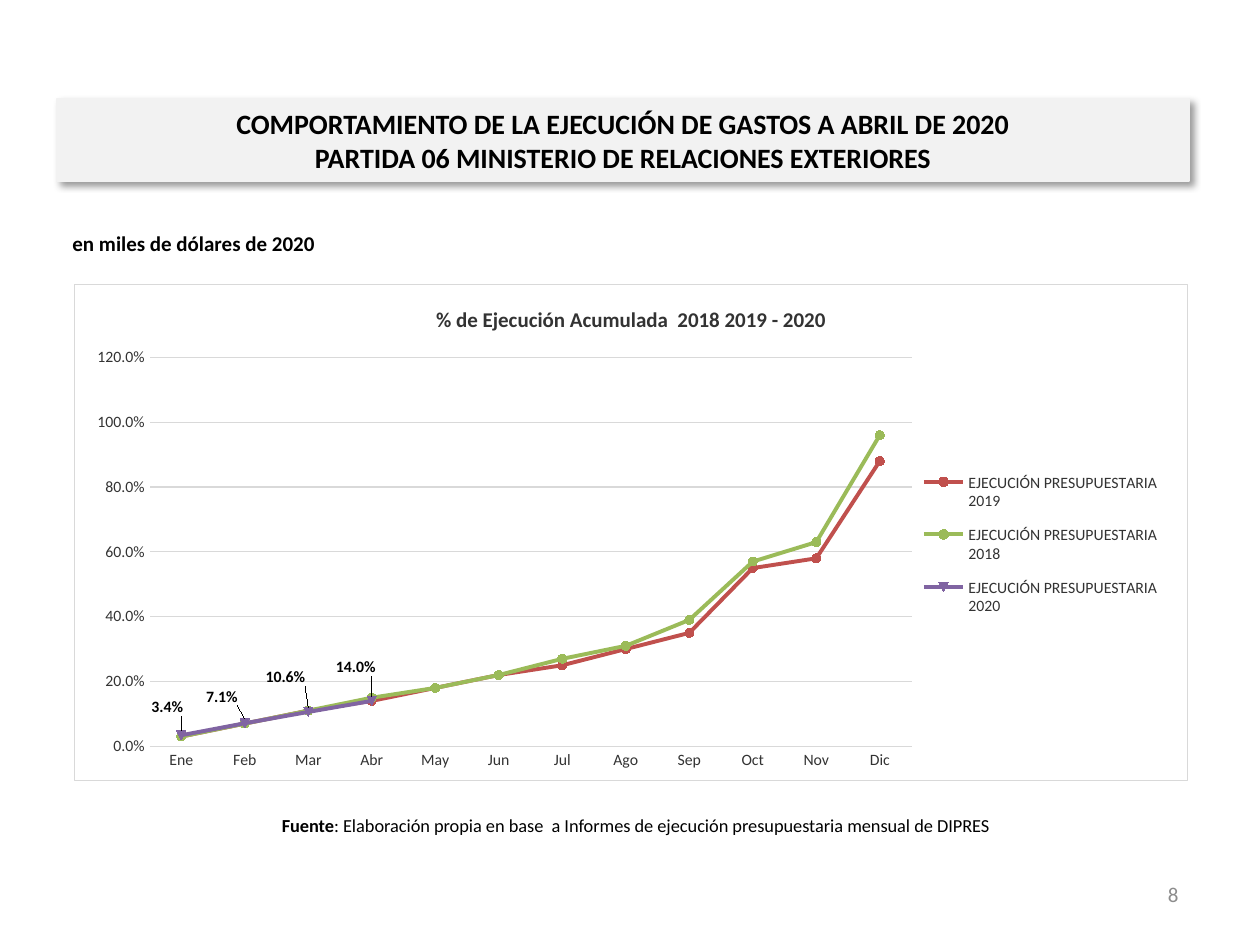
import pptx
import pptx.chart.data
import pptx.dml.color
import pptx.enum.chart
import pptx.enum.shapes
import pptx.enum.text
import pptx.oxml
import pptx.oxml.ns
import pptx.util

PX_PER_INCH = 126
FONT = "Calibri"
BLACK, DARK, GRID, PANEL = "000000", "333333", "D9D9D9", "F2F2F2"
ALIGN = pptx.enum.text.PP_ALIGN
ANCHOR = pptx.enum.text.MSO_ANCHOR
NAMESPACES = pptx.oxml.ns.nsdecls("a", "c")

MONTHS = ["Ene", "Feb", "Mar", "Abr", "May", "Jun",
          "Jul", "Ago", "Sep", "Oct", "Nov", "Dic"]
CIRCLE = pptx.enum.chart.XL_MARKER_STYLE.CIRCLE
# Year, colour, marker, accumulated share of the budget by month
EXECUTION = [
    (2019, "C0504D", CIRCLE,
     [.03, .07, .11, .14, .18, .22, .25, .30, .35, .55, .58, .88]),
    (2018, "9BBB59", CIRCLE,
     [.03, .07, .11, .15, .18, .22, .27, .31, .39, .57, .63, .96]),
    (2020, "8064A2", None, [.034, .071, .106, .14] + [None] * 8),
]
# Shift in px of each 2020 label from its place above the point
LABEL_SHIFTS = [(-14, -10), (-23, -8), (-23, -16), (-16, -15)]


def px(length):
    return pptx.util.Emu(round(length * 914400 / PX_PER_INCH))


def rgb(color):
    return pptx.dml.color.RGBColor.from_string(color)


def xml(markup):
    """Parse an element whose root has a free place for namespaces, marked NS."""
    return pptx.oxml.parse_xml(markup.replace("NS", NAMESPACES, 1))


def style_font(font, size, color=BLACK, bold=False):
    font.name, font.size, font.bold = FONT, pptx.util.Pt(size), bold
    font.color.rgb = rgb(color)


def write(frame, text, size, color=BLACK, bold=False, align=ALIGN.LEFT,
          anchor=ANCHOR.TOP, wrap=True):
    """Add text to the first paragraph; each newline is a line break."""
    frame.word_wrap, frame.vertical_anchor = wrap, anchor
    paragraph = frame.paragraphs[0]
    paragraph.alignment = align
    for number, line in enumerate(text.split("\n")):
        if number:
            paragraph.add_line_break()
        run = paragraph.add_run()
        run.text = line
        style_font(run.font, size, color, bold)


def text_frame(slide, box):
    return slide.shapes.add_textbox(*map(px, box)).text_frame


def add_heading(slide, box):
    banner = slide.shapes.add_shape(
        pptx.enum.shapes.MSO_SHAPE.RECTANGLE, *map(px, box))
    banner.fill.solid()
    banner.fill.fore_color.rgb = rgb(PANEL)
    banner.line.color.rgb = rgb(PANEL)
    banner.line.width = pptx.util.Pt(0.75)
    banner.shadow.inherit = False
    effects = banner.element.spPr.find(pptx.oxml.ns.qn("a:effectLst"))
    effects.append(xml(
        '<a:outerShdw NS blurRad="50800" dist="38100" dir="2700000" algn="tl">'
        '<a:srgbClr val="000000"><a:alpha val="40000"/></a:srgbClr>'
        '</a:outerShdw>'))
    write(banner.text_frame,
          "COMPORTAMIENTO DE LA EJECUCIÓN DE GASTOS A ABRIL DE 2020\n"
          "PARTIDA 06 MINISTERIO DE RELACIONES EXTERIORES",
          16, bold=True, align=ALIGN.CENTER, anchor=ANCHOR.MIDDLE)


def manual_layout(left, top, width, height, chart_box, inner=False):
    """Layout for a chart part, placed in px relative to the chart."""
    _, _, chart_width, chart_height = chart_box
    target = '<c:layoutTarget val="inner"/>' if inner else ""
    return xml(
        f'<c:layout NS><c:manualLayout>{target}'
        '<c:xMode val="edge"/><c:yMode val="edge"/>'
        f'<c:x val="{left / chart_width:.4f}"/>'
        f'<c:y val="{top / chart_height:.4f}"/>'
        f'<c:w val="{width / chart_width:.4f}"/>'
        f'<c:h val="{height / chart_height:.4f}"/>'
        '</c:manualLayout></c:layout>')


def set_layout(part, layout, before):
    for old in part.findall(pptx.oxml.ns.qn("c:layout")):
        part.remove(old)
    part.find(pptx.oxml.ns.qn(before)).addprevious(layout)


def style_series(series, color, marker):
    series.smooth = False
    series.format.line.color.rgb = rgb(color)
    series.format.line.width = pptx.util.Pt(2.25)
    if marker is not None:
        series.marker.style = marker
        series.marker.size = 5
    series.marker.format.fill.solid()
    series.marker.format.fill.fore_color.rgb = rgb(color)
    series.marker.format.line.color.rgb = rgb(color)


def label_points(series, chart_box):
    _, _, width, height = chart_box
    for index, (right, down) in enumerate(LABEL_SHIFTS):
        label = series.points[index].data_label
        style_font(label.font, 9, bold=True)
        label.position = pptx.enum.chart.XL_LABEL_POSITION.ABOVE
    entries = series.data_labels._element.findall(pptx.oxml.ns.qn("c:dLbl"))
    for entry, (right, down) in zip(entries, LABEL_SHIFTS):
        index = entry.find(pptx.oxml.ns.qn("c:idx"))
        index.addnext(xml('<c:numFmt NS formatCode="0.0%" sourceLinked="0"/>'))
        index.addnext(xml(
            '<c:layout NS><c:manualLayout>'
            f'<c:x val="{right / width:.4f}"/><c:y val="{down / height:.4f}"/>'
            '</c:manualLayout></c:layout>'))
    labels = series.data_labels
    labels.show_value = True
    labels.number_format, labels.number_format_is_linked = "0.0%", False
    style_font(labels.font, 9, bold=True)


def style_axes(chart):
    no_tick = pptx.enum.chart.XL_TICK_MARK.NONE
    for axis in (chart.category_axis, chart.value_axis):
        axis.major_tick_mark = axis.minor_tick_mark = no_tick
        style_font(axis.tick_labels.font, 9, DARK)
    values = chart.value_axis
    values.minimum_scale, values.maximum_scale, values.major_unit = 0, 1.2, .2
    values.tick_labels.number_format = "0.0%"
    values.tick_labels.number_format_is_linked = False
    values.format.line.fill.background()
    values.has_major_gridlines = True
    for line in (values.major_gridlines.format.line,
                 chart.category_axis.format.line):
        line.color.rgb = rgb(GRID)
        line.width = pptx.util.Pt(0.75)


def add_execution_chart(slide, box):
    data = pptx.chart.data.CategoryChartData(number_format="0.0%")
    data.categories = MONTHS
    for year, _, _, shares in EXECUTION:
        data.add_series(f"EJECUCIÓN PRESUPUESTARIA {year}", shares)
    chart = slide.shapes.add_chart(
        pptx.enum.chart.XL_CHART_TYPE.LINE_MARKERS, *map(px, box), data).chart
    style_font(chart.font, 10)
    chart.has_title = True
    write(chart.chart_title.text_frame,
          "% de Ejecución Acumulada  2018 2019 - 2020", 12, DARK, bold=True,
          align=ALIGN.CENTER)
    chart.chart_title.include_in_layout = False
    chart.has_legend = True
    chart.legend.position = pptx.enum.chart.XL_LEGEND_POSITION.RIGHT
    chart.legend.include_in_layout = False
    style_font(chart.legend.font, 9, DARK)
    style_axes(chart)
    plot = chart.plots[0]
    plot.vary_by_categories = False
    for series, (_, color, marker, _) in zip(plot.series, EXECUTION):
        style_series(series, color, marker)
    label_points(plot.series[2], box)

    chart_part = chart._chartSpace.find(pptx.oxml.ns.qn("c:chart"))
    set_layout(chart_part.find(pptx.oxml.ns.qn("c:plotArea")),
               manual_layout(75, 73, 763, 390, box, inner=True), "c:lineChart")
    set_layout(chart.legend._element,
               manual_layout(844, 174, 246, 174, box), "c:overlay")
    chart_part.addnext(xml(
        '<c:spPr NS><a:solidFill><a:srgbClr val="FFFFFF"/></a:solidFill>'
        f'<a:ln w="9525"><a:solidFill><a:srgbClr val="{GRID}"/></a:solidFill>'
        '</a:ln></c:spPr>'))


def add_source_note(slide, box):
    frame = text_frame(slide, box)
    centred = {"align": ALIGN.CENTER, "anchor": ANCHOR.MIDDLE}
    write(frame, "Fuente", 10.5, bold=True, **centred)
    write(frame, ": Elaboración propia en base  a Informes de ejecución "
          "presupuestaria mensual de DIPRES", 10.5, **centred)


def main():
    deck = pptx.Presentation()
    deck.slide_width, deck.slide_height = px(1260), px(945)
    slide = deck.slides.add_slide(deck.slide_layouts[6])
    write(text_frame(slide, (897, 869, 294, 50)), "8", 12, "8C8C8C",
          align=ALIGN.RIGHT, anchor=ANCHOR.MIDDLE)
    add_heading(slide, (57, 99, 1132, 82))
    write(text_frame(slide, (60, 224, 271, 38)),
          "en miles de dólares de 2020", 12, bold=True, wrap=False)
    add_source_note(slide, (57, 800, 1158, 50))
    add_execution_chart(slide, (74, 284, 1114, 497))
    deck.save("out.pptx")


if __name__ == "__main__":
    main()
